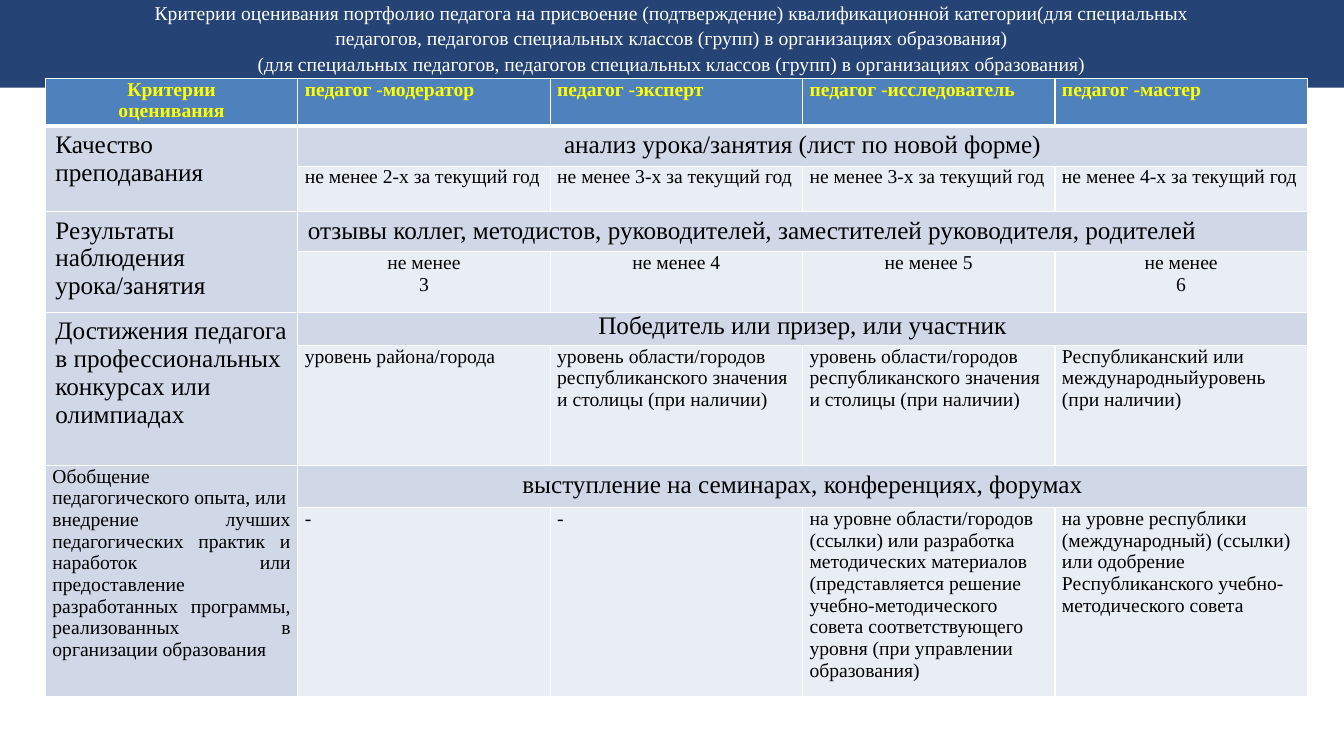
from lxml import etree
from pptx import Presentation
from pptx import util as u
from pptx.dml.color import RGBColor
from pptx.enum import shapes, text
from pptx.oxml import ns

Pt = u.Pt
LEFT, CENTER, JUSTIFY = text.PP_ALIGN.LEFT, text.PP_ALIGN.CENTER, text.PP_ALIGN.JUSTIFY
COLORS = {"band": "254375", "header": "4F81BD", "heading": "D0D8E8", "level": "E9EDF4",
          "white": "FFFFFF", "yellow": "FFFF00", "black": "000000"}
FONT = "Times New Roman"
NARROW, WIDE = (5.04, 0), (7.2, 3.6)
ROW_HEIGHTS = (32.4, 27.4, 32.4, 27.4, 41, 23.8, 85.7, 30.2, 124)
TITLE = ("Критерии оценивания портфолио педагога на присвоение (подтверждение) "
         "квалификационной категории(для специальных педагогов, педагогов специальных "
         "классов (групп) в организациях образования)\v(для специальных педагогов, "
         "педагогов специальных классов (групп) в организациях образования)")
HEADERS = ("Критерии\nоценивания", "педагог -модератор", "педагог -эксперт",
           "педагог -исследователь", "педагог -мастер")
REGIONAL = "уровень области/городов республиканского значения и столицы (при наличии)"
BIG = {"size": 18, "margins": WIDE}
CRITERIA = (
    ("Качество преподавания", BIG,
     "анализ урока/занятия (лист по новой форме)", {**BIG, "align": CENTER},
     [f"не менее {count}-х за текущий год" for count in (2, 3, 3, 4)], {}),
    ("Результаты наблюдения урока/занятия", BIG,
     "отзывы коллег, методистов, руководителей, заместителей руководителя, родителей", BIG,
     ("не менее\n3", "не менее 4", "не менее 5", "не менее\n6"), {"align": CENTER}),
    ("Достижения педагога в профессиональных конкурсах или олимпиадах", BIG,
     "Победитель или призер, или участник", {"size": 18, "align": CENTER},
     ("уровень района/города", REGIONAL, REGIONAL,
      "Республиканский или международныйуровень (при наличии)"), {}),
    ("Обобщение педагогического опыта, или\nвнедрение лучших педагогических практик и "
     "наработок или предоставление разработанных программы, реализованных в организации "
     "образования", {"last_align": JUSTIFY},
     "выступление на семинарах, конференциях, форумах", {**BIG, "align": CENTER},
     ("-", "-",
      "на уровне области/городов (ссылки) или разработка методических материалов "
      "(представляется решение учебно-методического совета соответствующего уровня "
      "(при управлении образования)",
      "на уровне республики (международный) (ссылки) или одобрение Республиканского "
      "учебно-методического совета"), {}),
)


def rgb(name):
    """Return the named palette colour."""
    return RGBColor.from_string(COLORS[name])


def style_font(paragraph, size, color, bold=False):
    """Set the font of a whole paragraph."""
    font = paragraph.font
    font.name, font.size, font.bold = FONT, Pt(size), bold
    font.color.rgb = rgb(color)


def add_band(slide):
    """Draw the dark band across the top."""
    shape = slide.shapes.add_shape(shapes.MSO_SHAPE.RECTANGLE, 0, 0, Pt(960), Pt(62.6))
    shape.shadow.inherit = False
    shape.fill.solid()
    shape.fill.fore_color.rgb = rgb("band")
    shape.line.fill.background()


def add_title(slide):
    """Write the title over the band."""
    frame = slide.shapes.add_textbox(Pt(101.5), Pt(-0.7), Pt(756.7), Pt(56)).text_frame
    frame.word_wrap = True
    frame.margin_left = frame.margin_right = frame.margin_top = frame.margin_bottom = 0
    paragraph = frame.paragraphs[0]
    paragraph.text = TITLE
    paragraph.alignment = CENTER
    paragraph.line_spacing = 1.08
    style_font(paragraph, 14, "white")


def paint_cell(cell, fill, bottom=1):
    """Fill a cell and give it white borders."""
    cell.fill.solid()
    cell.fill.fore_color.rgb = rgb(fill)
    properties = cell._tc.get_or_add_tcPr()
    widths = {"lnL": 1, "lnR": 1, "lnT": 1, "lnB": bottom}
    for index, (side, width) in enumerate(widths.items()):
        line = etree.Element(ns.qn(f"a:{side}"), w=str(Pt(width)))
        solid = etree.SubElement(line, ns.qn("a:solidFill"))
        etree.SubElement(solid, ns.qn("a:srgbClr"), val=COLORS["white"])
        properties.insert(index, line)


def write_cell(cell, content, size=14, color="black", bold=False, align=LEFT,
               last_align=None, margins=NARROW):
    """Write paragraphs into a cell."""
    cell.margin_left = cell.margin_right = Pt(margins[0])
    cell.margin_top = cell.margin_bottom = Pt(margins[1])
    cell.text = content
    paragraphs = cell.text_frame.paragraphs
    for paragraph in paragraphs:
        paragraph.alignment = align
        style_font(paragraph, size, color, bold)
    paragraphs[-1].alignment = last_align or align


def add_criteria_table(slide):
    """Build the table of criteria by teacher category."""
    table = slide.shapes.add_table(len(ROW_HEIGHTS), len(HEADERS), Pt(32.4), Pt(56.2),
                                   Pt(901.5), Pt(sum(ROW_HEIGHTS))).table
    for column in table.columns:
        column.width = Pt(180.3)
    for row, height in zip(table.rows, ROW_HEIGHTS):
        row.height = Pt(height)
    for column, header in enumerate(HEADERS):
        cell = table.cell(0, column)
        paint_cell(cell, "header", bottom=3)
        write_cell(cell, header, color="yellow", bold=True,
                   align=LEFT if column else CENTER)
    for index, criterion in enumerate(CRITERIA):
        name, name_style, heading, heading_style, levels, level_style = criterion
        top = 1 + 2 * index
        for column in range(len(HEADERS)):
            paint_cell(table.cell(top, column), "heading")
            paint_cell(table.cell(top + 1, column), "level" if column else "heading")
        table.cell(top, 0).merge(table.cell(top + 1, 0))
        table.cell(top, 1).merge(table.cell(top, 4))
        write_cell(table.cell(top, 0), name, **name_style)
        write_cell(table.cell(top, 1), heading, **heading_style)
        for column, level in enumerate(levels, 1):
            write_cell(table.cell(top + 1, column), level, **level_style)


def main():
    """Build and save the slide."""
    presentation = Presentation()
    presentation.slide_width, presentation.slide_height = Pt(960), Pt(540)
    slide = presentation.slides.add_slide(presentation.slide_layouts[6])
    add_band(slide)
    add_title(slide)
    add_criteria_table(slide)
    presentation.save("out.pptx")


if __name__ == "__main__":
    main()
